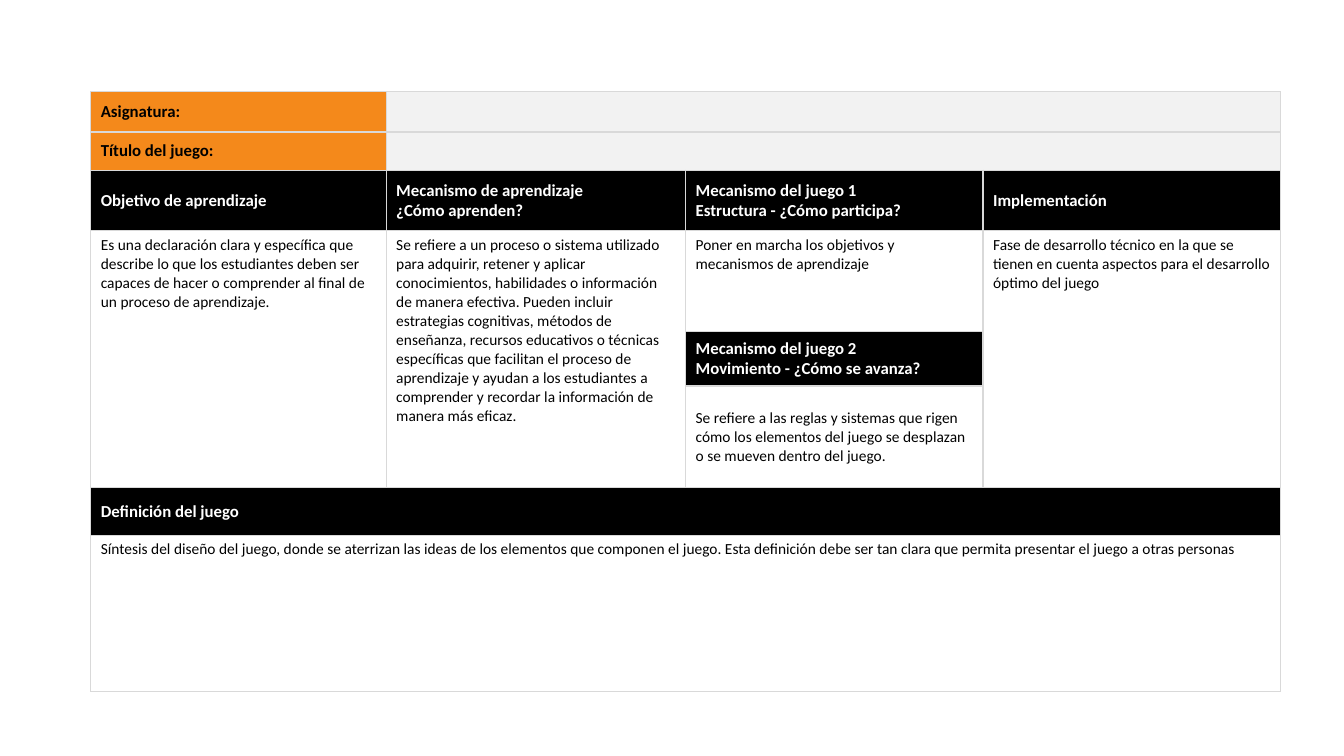
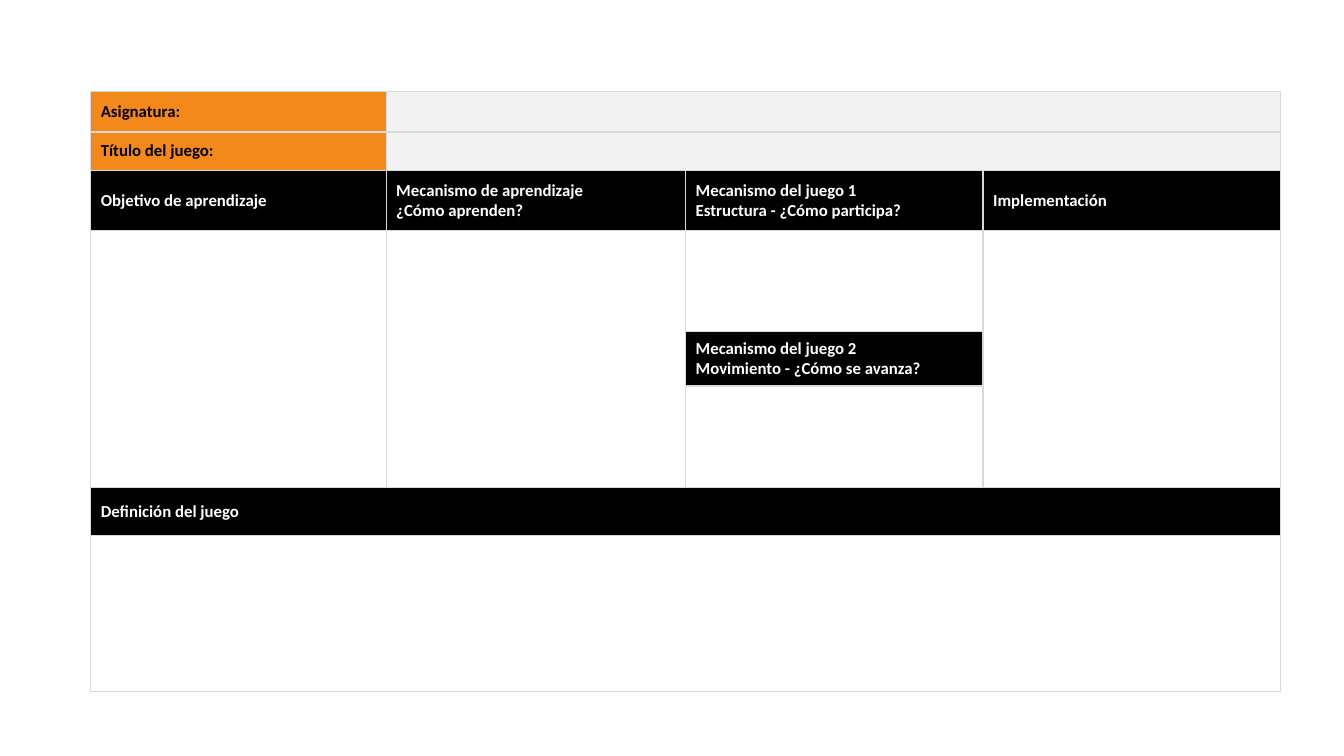
import pptx
import pptx.util
import pptx.dml.color
import pptx.enum.text
from lxml import etree
from pptx.oxml.ns import qn
from pptx.util import Inches

FONT = "Calibri"
COLORS = {"black": "000000", "white": "FFFFFF", "orange": "F4891B",
          "gray": "F2F2F2", "border": "D9D9D9"}
COLS = [2.93, 2.97, 2.95, 2.95]
ROWS = [0.4, 0.38, 0.6, 1, 0.54, 1.01, 0.47, 1.55]
LEFT, TOP = 0.9, 0.91

LABEL = dict(fill="orange", size=12, bold=True, middle=True)
HEADER = dict(fill="black", color="white", size=12, bold=True, middle=True)

HEADINGS = [
    (0, 0, "Asignatura:", LABEL),
    (1, 0, "Título del juego:", LABEL),
    (2, 0, "Objetivo de aprendizaje", HEADER),
    (2, 1, "Mecanismo de aprendizaje\v¿Cómo aprenden?", HEADER),
    (2, 2, "Mecanismo del juego 1\nEstructura - ¿Cómo participa?", HEADER),
    (2, 3, "Implementación", HEADER),
    (4, 2, "Mecanismo del juego 2\nMovimiento - ¿Cómo se avanza?", HEADER),
    (6, 0, "Definición del juego", HEADER),
]
BLANKS = [(0, 1, "", dict(fill="gray")), (1, 1, "", dict(fill="gray")),
          (7, 0, "", dict(fill="white"))]
GUIDANCE = [
    (3, 0, "Es una declaración clara y específica que describe lo que los estudiantes "
           "deben ser capaces de hacer o comprender al final de un proceso de aprendizaje.", {}),
    (3, 1, "Se refiere a un proceso o sistema utilizado para adquirir, retener y aplicar "
           "conocimientos, habilidades o información de manera efectiva. Pueden incluir "
           "estrategias cognitivas, métodos de enseñanza, recursos educativos o técnicas "
           "específicas que facilitan el proceso de aprendizaje y ayudan a los estudiantes a "
           "comprender y recordar la información de manera más eficaz.", {}),
    (3, 2, "Poner en marcha los objetivos y mecanismos de aprendizaje", {}),
    (3, 3, "Fase de desarrollo técnico en la que se tienen en cuenta aspectos para el "
           "desarrollo óptimo del juego", {}),
    (5, 2, "Se refiere a las reglas y sistemas que rigen cómo los elementos del juego se "
           "desplazan o se mueven dentro del juego.", dict(middle=True)),
    (7, 0, "Síntesis del diseño del juego, donde se aterrizan las ideas de los elementos que "
           "componen el juego. Esta definición debe ser tan clara que permita presentar el "
           "juego a otras personas", dict(fill="white")),
]
MERGES = [((0, 1), (0, 3)), ((1, 1), (1, 3)), ((3, 0), (5, 0)), ((3, 1), (5, 1)),
          ((3, 3), (5, 3)), ((6, 0), (6, 3)), ((7, 0), (7, 3))]
SLIDES = [GUIDANCE, []]


def rgb(name):
    return pptx.dml.color.RGBColor.from_string(COLORS[name])


def add_borders(cell):
    tcPr = cell._tc.get_or_add_tcPr()
    for side in ("lnL", "lnR", "lnT", "lnB"):
        ln = etree.SubElement(tcPr, qn("a:" + side), w=str(pptx.util.Pt(1)))
        fill = etree.SubElement(ln, qn("a:solidFill"))
        etree.SubElement(fill, qn("a:srgbClr"), val=COLORS["border"])


def write_cell(cell, text, fill=None, color="black", size=11, bold=False, middle=False):
    if fill:
        cell.fill.solid()
        cell.fill.fore_color.rgb = rgb(fill)
    else:
        cell.fill.background()
    anchor = pptx.enum.text.MSO_ANCHOR
    cell.vertical_anchor = anchor.MIDDLE if middle else anchor.TOP
    tf = cell.text_frame
    tf.text = text
    for p in tf.paragraphs:
        for r in p.runs:
            r.font.name = FONT
            r.font.size = pptx.util.Pt(size)
            r.font.bold = bold
            r.font.color.rgb = rgb(color)
        if not p.runs:
            etree.SubElement(p._p, qn("a:endParaRPr"), sz=str(size * 100))


def add_canvas(prs, guidance):
    s = prs.slides.add_slide(prs.slide_layouts[6])
    table = s.shapes.add_table(len(ROWS), len(COLS), Inches(LEFT), Inches(TOP),
                               Inches(sum(COLS)), Inches(sum(ROWS))).table
    table.first_row = table.horz_banding = False
    for column, width in zip(table.columns, COLS):
        column.width = Inches(width)
    for row, height in zip(table.rows, ROWS):
        row.height = Inches(height)
    for start, end in MERGES:
        table.cell(*start).merge(table.cell(*end))
    content = {(i, j): (text, style) for i, j, text, style in HEADINGS + BLANKS + guidance}
    for i in range(len(ROWS)):
        for j in range(len(COLS)):
            text, style = content.get((i, j), ("", {}))
            add_borders(table.cell(i, j))
            write_cell(table.cell(i, j), text, **style)


def main():
    prs = pptx.Presentation()
    prs.slide_width, prs.slide_height = Inches(13.33), Inches(7.5)
    for guidance in SLIDES:
        add_canvas(prs, guidance)
    prs.save("out.pptx")


if __name__ == "__main__":
    main()
